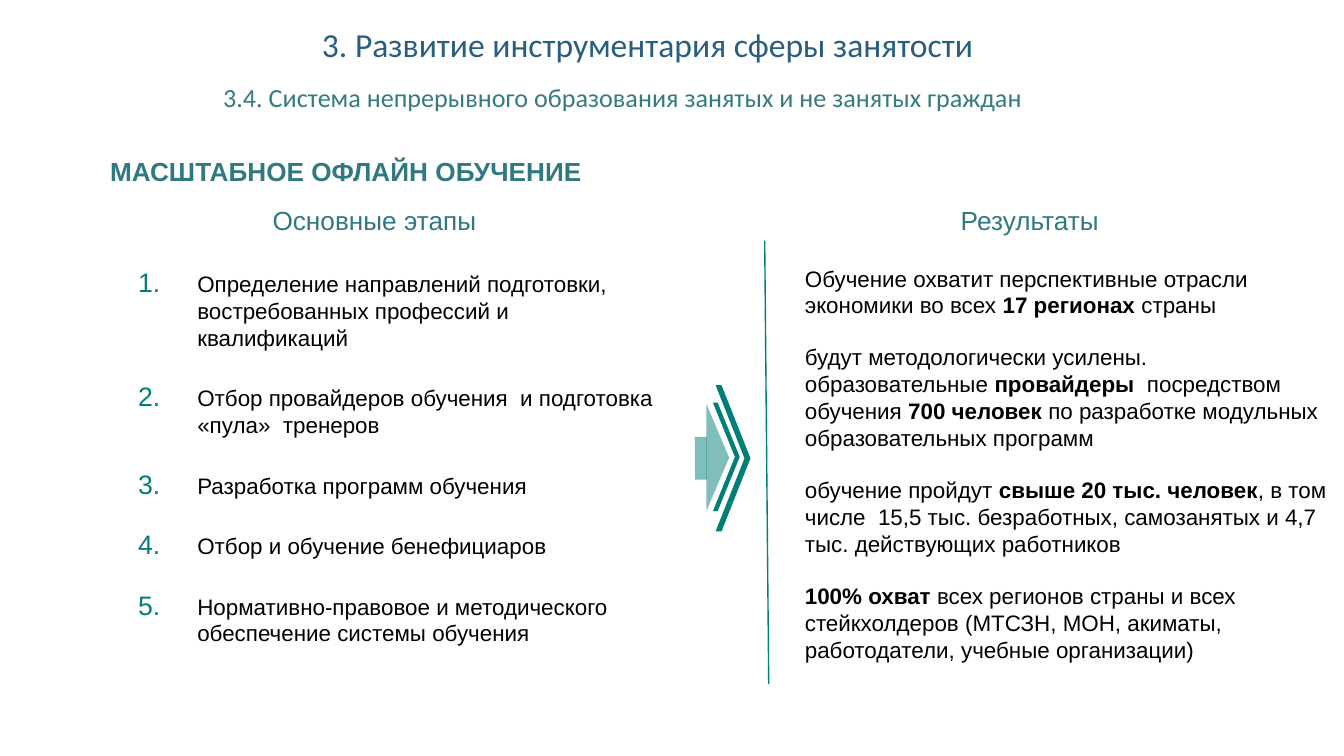
"""Build the slide on offline training stages and results."""
from lxml.etree import SubElement
from pptx import Presentation
from pptx.dml.color import RGBColor
from pptx.enum.shapes import MSO_CONNECTOR, MSO_SHAPE
from pptx.enum.text import MSO_ANCHOR, PP_ALIGN
from pptx.oxml.ns import qn
from pptx.util import Inches, Pt

TEAL = "007F76"


def paint(color, value):
    color.rgb = RGBColor.from_string(value)


def write(box, paras, font, size, value, wrap=True):
    left, top, width, height = map(Inches, box)
    frame = slide.shapes.add_textbox(left, top, width, height).text_frame
    frame.word_wrap = wrap
    for i, runs in enumerate(paras):
        para = frame.add_paragraph() if i else frame.paragraphs[0]
        for text, strong in runs:
            run = para.add_run()
            run.text = text
            run.font.name = font
            run.font.size = Pt(size)
            run.font.bold = strong
            paint(run.font.color, value)
    return frame


deck = Presentation()
deck.slide_width, deck.slide_height = Inches(10), Inches(10 * 9 / 16)
slide = deck.slides.add_slide(deck.slide_layouts[6])

heads = [
    ((0.32, 0.06, 9, 0.54), "3. Развитие инструментария сферы занятости", 18, "295E7E"),
    ((1.49, 0.55, 6.29, 0.34),
     "3.4. Система непрерывного образования занятых и не занятых граждан", 14, "357B7F"),
]
for box, text, size, value in heads:
    frame = write(box, [[(text, False)]], "Calibri", size, value, False)
    frame.paragraphs[0].alignment = PP_ALIGN.CENTER
    frame.vertical_anchor = MSO_ANCHOR.MIDDLE

labels = [
    ((0.72, 1.11, 4.38, 0.34), "МАСШТАБНОЕ ОФЛАЙН ОБУЧЕНИЕ", True),
    ((1.93, 1.47, 1.73, 0.34), "Основные этапы", False),
    ((7.05, 1.47, 1.29, 0.34), "Результаты", False),
]
for box, text, bold in labels:
    write(box, [[(text, bold)]], "Arial", 14, "307980", bold)

steps = [
    "Определение направлений подготовки, востребованных профессий и квалификаций",
    "Отбор провайдеров обучения  и подготовка «пула»  тренеров",
    "Разработка программ обучения",
    "Отбор и обучение бенефициаров",
    "Нормативно-правовое и методического обеспечение системы обучения",
]
frame = write((0.78, 1.92, 4.26, 2.98), [[(step, False)] for step in steps],
              "Arial", 12, "000000")
frame.vertical_anchor = MSO_ANCHOR.MIDDLE
for para in frame.paragraphs:
    para.space_before, para.space_after = Pt(4.5), Pt(13.5)
    props = para._p.get_or_add_pPr()
    props.set("marL", str(Inches(0.59)))
    props.set("indent", str(Inches(-0.44)))
    SubElement(SubElement(props, qn("a:buClr")), qn("a:srgbClr"), val=TEAL)
    SubElement(props, qn("a:buSzPct"), val="119000")
    SubElement(props, qn("a:buFont"), typeface="Arial")
    SubElement(props, qn("a:buAutoNum"), type="arabicPeriod")

gains = [
    [("Обучение охватит перспективные отрасли экономики во всех ", False),
     ("17 регионах ", True), ("страны", False)],
    [("будут методологически усилены.  образовательные ", False),
     ("провайдеры", True), ("  посредством обучения ", False),
     ("700 человек ", True),
     ("по разработке модульных образовательных программ", False)],
    [("обучение пройдут ", False), ("свыше 20 тыс. человек", True),
     (", в том числе  15,5 тыс. безработных, самозанятых и 4,7 тыс. "
      "действующих работников", False)],
    [("100% охват ", True),
     ("всех регионов страны и всех стейкхолдеров (МТСЗН, МОН, акиматы, "
      "работодатели, учебные организации)", False)],
]
frame = write((5.89, 1.92, 4.09, 3.11), gains, "Arial", 12, "000000")
for para in frame.paragraphs:
    para.space_after = Pt(13.5)

rule = slide.shapes.add_connector(
    MSO_CONNECTOR.STRAIGHT, Inches(5.69), Inches(1.79), Inches(5.72), Inches(5.09))
paint(rule.line.color, TEAL)
rule.line.width = Pt(0.75)
SubElement(rule._element.spPr, qn("a:effectLst"))

parts = [
    (MSO_SHAPE.CHEVRON, (5.33, 2.87, 0.25, 1.08), 0),
    (MSO_SHAPE.CHEVRON, (5.31, 3, 0.19, 0.8), 0),
    (MSO_SHAPE.ISOSCELES_TRIANGLE, (4.94, 3.32, 0.8, 0.17), 90),
    (MSO_SHAPE.RECTANGLE, (5.17, 3.25, 0.09, 0.32), 0),
]
for kind, box, turn in parts:
    shape = slide.shapes.add_shape(kind, *map(Inches, box))
    shape.shadow.inherit = False
    shape.rotation = turn
    shape.fill.solid()
    paint(shape.fill.fore_color, TEAL)
    if kind == MSO_SHAPE.CHEVRON:
        shape.adjustments[0] = 0.854
        paint(shape.line.color, TEAL)
        shape.line.width = Pt(0.5)
    else:
        shape.line.fill.background()
        tint = shape._element.spPr.find(qn("a:solidFill"))[0]
        SubElement(tint, qn("a:alpha"), val="50000")

deck.save("out.pptx")
